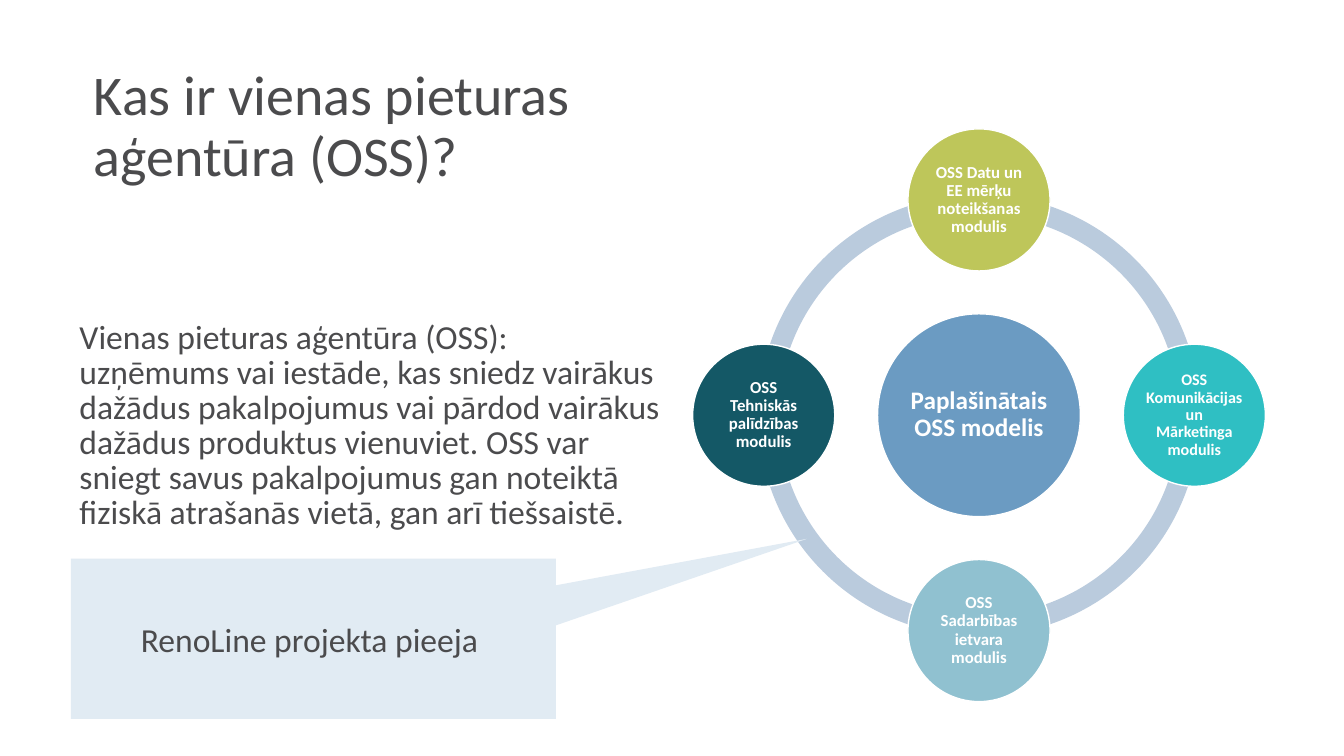
"""Builds a slide on the one-stop-shop agency model."""
import pptx
import pptx.util
import pptx.dml.color
import pptx.enum.shapes
import pptx.enum.text

Pt = pptx.util.Pt
RGB = pptx.dml.color.RGBColor
SHAPE = pptx.enum.shapes.MSO_SHAPE
ALIGN = pptx.enum.text.PP_ALIGN
ANCHOR = pptx.enum.text.MSO_ANCHOR

FONT = "Calibri"
WHITE = RGB(0xFF, 0xFF, 0xFF)
GREY = RGB(0x4B, 0x4B, 0x4D)
RING = RGB(0xBA, 0xCB, 0xDD)
BLUE = RGB(0x6B, 0x9B, 0xC2)
LIME = RGB(0xBE, 0xC6, 0x5A)
TEAL = RGB(0x2F, 0xBF, 0xC3)
SKY = RGB(0x90, 0xC1, 0xD0)
DARK = RGB(0x14, 0x58, 0x66)
PALE = RGB(0xE1, 0xEB, 0xF3)

MID_X, MID_Y = 699.3, 296.6
ORBIT = 153.8
MODULES = [
    (0, -1, LIME, "OSS Datu un EE mērķu noteikšanas modulis", 12),
    (1, 0, TEAL, "OSS Komunikācijas un Mārketinga modulis", 11.5),
    (0, 1, SKY, "OSS Sadarbības ietvara modulis", 12),
    (-1, 0, DARK, "OSS Tehniskās palīdzības modulis", 12),
]


def add_text(shape, text, size, color=GREY, bold=False, align=ALIGN.LEFT,
             anchor=ANCHOR.MIDDLE, line=0.9, inset=None):
    """Writes one styled paragraph into a shape."""
    frame = shape.text_frame
    frame.word_wrap = True
    frame.vertical_anchor = anchor
    if inset is not None:
        frame.margin_left = frame.margin_right = Pt(inset)
        frame.margin_top = frame.margin_bottom = Pt(inset)
    para = frame.paragraphs[0]
    para.alignment = align
    para.line_spacing = line
    run = para.add_run()
    run.text = text
    run.font.name = FONT
    run.font.size = Pt(size)
    run.font.bold = bold
    run.font.color.rgb = color


def add_box(slide, left, top, width, height):
    """Adds an empty text box."""
    return slide.shapes.add_textbox(Pt(left), Pt(top), Pt(width), Pt(height))


def add_form(slide, kind, left, top, width, height, fill):
    """Adds a flat preset shape without an outline."""
    form = slide.shapes.add_shape(kind, Pt(left), Pt(top), Pt(width), Pt(height))
    form.shadow.inherit = False
    form.fill.solid()
    form.fill.fore_color.rgb = fill
    form.line.fill.background()
    return form


def add_ring(slide, size):
    """Draws the ring as four quarter arcs."""
    quarter = 54
    for step in range(4):
        arc = add_form(slide, SHAPE.BLOCK_ARC, MID_X - size / 2,
                       MID_Y - size / 2, size, size, RING)
        arc.adjustments[0] = step * quarter
        arc.adjustments[1] = (step + 1) % 4 * quarter
        arc.adjustments[2] = 0.046


def add_disc(slide, x, y, size, fill, text, points, inset):
    """Draws a white-edged circle with a centred label."""
    disc = add_form(slide, SHAPE.OVAL, x - size / 2, y - size / 2, size, size, fill)
    disc.line.color.rgb = WHITE
    disc.line.width = Pt(1)
    side = size * 0.707
    label = add_box(slide, x - side / 2, y - side / 2, side, side)
    add_text(label, text, points, WHITE, True, ALIGN.CENTER, inset=inset)


def add_note(slide):
    """Draws the callout that points at the ring."""
    note = add_form(slide, SHAPE.RECTANGULAR_CALLOUT, 50.6, 399, 346.5, 114.5, PALE)
    note.adjustments[0] = 1.018
    note.adjustments[1] = -0.624
    add_text(note, "RenoLine projekta pieeja ", 24, align=ALIGN.CENTER, line=1.0)


def main():
    """Builds and saves the slide."""
    deck = pptx.Presentation()
    deck.slide_width, deck.slide_height = Pt(960), Pt(540)
    slide = deck.slides.add_slide(deck.slide_layouts[6])
    add_text(add_box(slide, 60, 27.4, 366, 128),
             "Kas ir vienas pieturas aģentūra (OSS)?", 40)
    add_text(add_box(slide, 49.7, 226, 430.5, 228),
             "Vienas pieturas aģentūra (OSS): uzņēmums vai iestāde, kas sniedz "
             "vairākus dažādus pakalpojumus vai pārdod vairākus dažādus produktus "
             "vienuviet. OSS var sniegt savus pakalpojumus gan noteiktā fiziskā "
             "atrašanās vietā, gan arī tiešsaistē.",
             24, anchor=ANCHOR.TOP, line=0.87)
    add_ring(slide, 315.4)
    add_disc(slide, MID_X, MID_Y, 144.9, BLUE, "Paplašinātais OSS modelis", 18, 2)
    for across, down, fill, text, points in MODULES:
        add_disc(slide, MID_X + across * ORBIT, MID_Y + down * ORBIT,
                 101.5, fill, text, points, 1.2)
    add_note(slide)
    deck.save("out.pptx")


if __name__ == "__main__":
    main()
